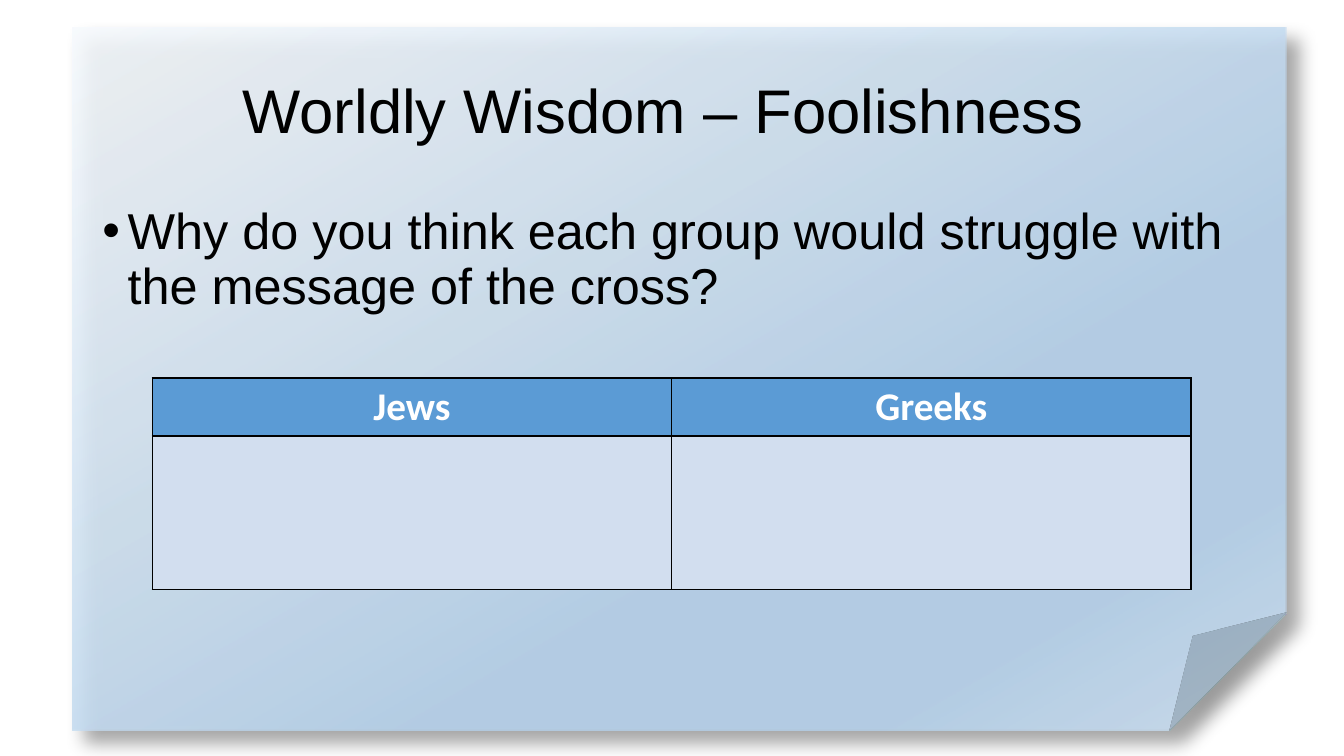
from pptx import Presentation
from pptx.dml.color import RGBColor
from pptx.enum.shapes import MSO_SHAPE as SHAPE
from pptx.enum.text import MSO_ANCHOR as ANCHOR, MSO_AUTO_SIZE as AUTO, PP_ALIGN as ALIGN
from pptx.oxml import parse_xml
from pptx.oxml.ns import nsdecls
from pptx.util import Pt

STOPS = [(0, "F7FAFD"), (64, "B5D2EC"), (83, "B5D2EC"), (100, "CEE1F2")]
GROUPS = ["Jews", "Greeks"]
ROW_FILLS = ["5B9BD5", "D2DEEF"]
ROW_HEIGHTS = [41.4, 109.4]


def rgb(value):
    """Turn a hex string into a colour."""
    return RGBColor.from_string(value)


def style(p, size, font, color, bold=False):
    """Format every run of a paragraph."""
    for r in p.runs:
        r.font.size, r.font.name, r.font.bold = Pt(size), font, bold
        r.font.color.rgb = rgb(color)


def add_paper(slide, left, top, width, height):
    """Draw the folded sheet behind everything else."""
    sp = slide.shapes.add_shape(SHAPE.FOLDED_CORNER, Pt(left), Pt(top), Pt(width), Pt(height))
    sp.shadow.inherit = False
    sp.line.fill.background()
    sp.fill.background()
    stops = "".join(
        f'<a:gs pos="{pos * 1000}"><a:srgbClr val="{color}"><a:alpha val="87000"/></a:srgbClr></a:gs>'
        for pos, color in STOPS)
    gradient = parse_xml(
        f'<a:gradFill {nsdecls("a")} rotWithShape="1"><a:gsLst>{stops}</a:gsLst>'
        '<a:lin ang="3600000" scaled="0"/></a:gradFill>')
    shadow = parse_xml(
        f'<a:outerShdw {nsdecls("a")} blurRad="{Pt(13)}" dist="{Pt(13)}" dir="2700000" algn="tl" '
        'rotWithShape="0"><a:srgbClr val="000000"><a:alpha val="40000"/></a:srgbClr></a:outerShdw>')
    props = sp._element.spPr
    props.replace(props.find("{*}noFill"), gradient)
    props.find("{*}effectLst").append(shadow)
    slide.shapes._spTree.insert(2, sp._element)


def fill_placeholder(sp, text, box, size, anchor, align):
    """Place a placeholder and write its text."""
    sp.left, sp.top, sp.width, sp.height = map(Pt, box)
    tf = sp.text_frame
    tf.text = text
    tf.word_wrap, tf.auto_size, tf.vertical_anchor = True, AUTO.NONE, anchor
    p = tf.paragraphs[0]
    p.alignment, p.line_spacing, p.space_before = align, 0.9, Pt(0)
    style(p, size, "Arial", "000000")
    return p


def add_bullet(p, indent):
    """Give a paragraph a hanging round bullet."""
    props = p._p.get_or_add_pPr()
    props.set("marL", str(Pt(indent)))
    props.set("indent", str(-Pt(indent)))
    props.append(parse_xml(f'<a:buFont {nsdecls("a")} typeface="Arial"/>'))
    props.append(parse_xml(f'<a:buChar {nsdecls("a")} char="•"/>'))


def add_borders(cell):
    """Draw a thin black line on each side of a cell."""
    props = cell._tc.get_or_add_tcPr()
    for i, side in enumerate(["lnL", "lnR", "lnT", "lnB"]):
        props.insert(i, parse_xml(
            f'<a:{side} {nsdecls("a")} w="{Pt(1)}"><a:solidFill><a:srgbClr val="000000"/>'
            f'</a:solidFill></a:{side}>'))


def add_group_table(slide, left, top, width):
    """Add the table with one headed column per group."""
    table = slide.shapes.add_table(
        len(ROW_HEIGHTS), len(GROUPS), Pt(left), Pt(top), Pt(width), Pt(sum(ROW_HEIGHTS))).table
    for row, height, color in zip(table.rows, ROW_HEIGHTS, ROW_FILLS):
        row.height = Pt(height)
        for cell in row.cells:
            cell.fill.solid()
            cell.fill.fore_color.rgb = rgb(color)
            add_borders(cell)
    for cell, group in zip(table.rows[0].cells, GROUPS):
        cell.text = group
        p = cell.text_frame.paragraphs[0]
        p.alignment = ALIGN.CENTER
        style(p, 28, "Calibri", "FFFFFF", True)


def main():
    """Build and save the slide."""
    prs = Presentation()
    prs.slide_width, prs.slide_height = Pt(960), Pt(540)
    slide = prs.slides.add_slide(prs.slide_layouts[1])
    title, body = slide.placeholders
    add_paper(slide, 51.5, 19.5, 867.5, 502)
    fill_placeholder(title, "Worldly Wisdom – Foolishness ", (66, 28.75, 828, 104.4),
                     44, ANCHOR.MIDDLE, ALIGN.CENTER)
    p = fill_placeholder(
        body, "Why do you think each group would struggle with the message of the cross?",
        (66, 143.75, 828, 342.6), 36, ANCHOR.TOP, ALIGN.LEFT)
    add_bullet(p, 18)
    add_group_table(slide, 108.75, 270, 742)
    prs.save("out.pptx")


if __name__ == "__main__":
    main()
